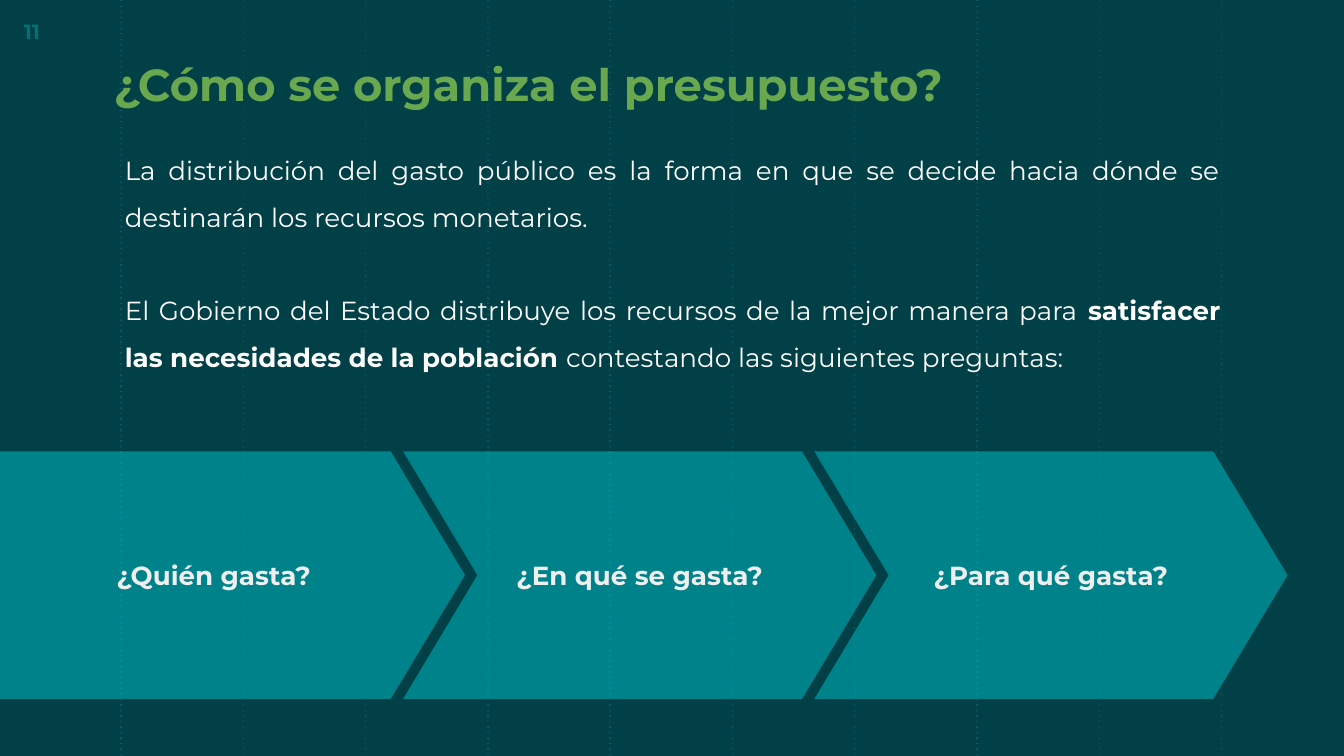
from lxml.etree import SubElement
from pptx import Presentation
from pptx.dml.color import RGBColor
from pptx.enum.shapes import MSO_CONNECTOR, MSO_SHAPE
from pptx.enum.text import MSO_ANCHOR as Anchor, PP_ALIGN as Align
from pptx.oxml.ns import qn
from pptx.util import Inches, Pt

WIDTH = 10
HEIGHT = WIDTH * 9 / 16
BACKGROUND, GUIDE, TEAL = "004046", "005C65", "00BFC9"
ARROW_TOP, ARROW_HEIGHT = 3.36, 1.84
TEAL_ALPHA = 52

TITLE = [[("¿Cómo se organiza el presupuesto?", True)]]
NUMBER = [[("11", True)]]
BODY = [
    [("La distribución del gasto público es la forma en que se decide hacia dónde se "
      "destinarán los recursos monetarios.", False)],
    [("El Gobierno del Estado distribuye los recursos de la mejor manera para ", False),
     ("satisfacer las necesidades de la población ", True),
     ("contestando las siguientes preguntas:", False)],
]
QUESTIONS = [
    ("¿Quién gasta?", MSO_SHAPE.PENTAGON, 0, 3.46),
    ("¿En qué se gasta?", MSO_SHAPE.CHEVRON, 3, 3.52),
    ("¿Para qué gasta?", MSO_SHAPE.CHEVRON, 6.06, 3.52),
]


def color(value):
    return RGBColor.from_string(value)


def write(shape, paragraphs, size, ink, anchor, inset=(0.1, 0.1), **paragraph_format):
    frame = shape.text_frame
    side, edge = map(Inches, inset)
    frame_format = {"word_wrap": True, "vertical_anchor": anchor,
                    "margin_left": side, "margin_right": side,
                    "margin_top": edge, "margin_bottom": edge}
    for key, value in frame_format.items():
        setattr(frame, key, value)
    for index, pieces in enumerate(paragraphs):
        paragraph = frame.add_paragraph() if index else frame.paragraphs[0]
        for key, value in paragraph_format.items():
            setattr(paragraph, key, value)
        for words, bold in pieces:
            run = paragraph.add_run()
            run.text = words
            for key, value in {"name": "Montserrat", "size": Pt(size), "bold": bold}.items():
                setattr(run.font, key, value)
            run.font.color.rgb = color(ink)
    return frame.paragraphs


def add_guide(slide, x):
    guide = slide.shapes.add_connector(
        MSO_CONNECTOR.STRAIGHT, Inches(x), 0, Inches(x), Inches(HEIGHT))
    guide.line.color.rgb = color(GUIDE)
    guide.line.width = Pt(0.75)
    properties = guide.element.spPr
    SubElement(properties.find(qn("a:ln")), qn("a:prstDash"), val="dot")
    SubElement(properties, qn("a:effectLst"))


def add_text(slide, box, *content, **options):
    return write(slide.shapes.add_textbox(*map(Inches, box)), *content, **options)


def add_question(slide, words, kind, left, width):
    arrow = slide.shapes.add_shape(
        kind, *map(Inches, (left, ARROW_TOP, width, ARROW_HEIGHT)))
    arrow.adjustments[0] = 0.3
    arrow.shadow.inherit = False
    arrow.line.fill.background()
    arrow.fill.solid()
    arrow.fill.fore_color.rgb = color(TEAL)
    teal = arrow.element.spPr.find(qn("a:solidFill"))[0]
    SubElement(teal, qn("a:alpha"), val=str(TEAL_ALPHA * 1000))
    write(arrow, [[(words, True)]], 14, "EFEFEF", Anchor.MIDDLE, alignment=Align.CENTER)


def main():
    deck = Presentation()
    deck.slide_width, deck.slide_height = Inches(WIDTH), Inches(HEIGHT)
    slide = deck.slides.add_slide(deck.slide_layouts[6])
    slide.background.fill.solid()
    slide.background.fill.fore_color.rgb = color(BACKGROUND)

    for column in range(10):
        add_guide(slide, 0.9 + 0.91 * column)
    add_text(slide, (0.08, 0.03, 0.6, 0.4), NUMBER, 11, "007078", Anchor.MIDDLE)
    add_text(slide, (0.75, 0.16, 6.47, 0.76), TITLE, 24, "6AA84F", Anchor.BOTTOM)
    for question in QUESTIONS:
        add_question(slide, *question)
    body = add_text(slide, (0.83, 0.98, 8.35, 1.83), BODY, 14, "FFFFFF", Anchor.TOP,
                    inset=(0.1, 0.05), alignment=Align.JUSTIFY, line_spacing=1.5)
    body[1].space_before = Pt(25)
    deck.save("out.pptx")


if __name__ == "__main__":
    main()
